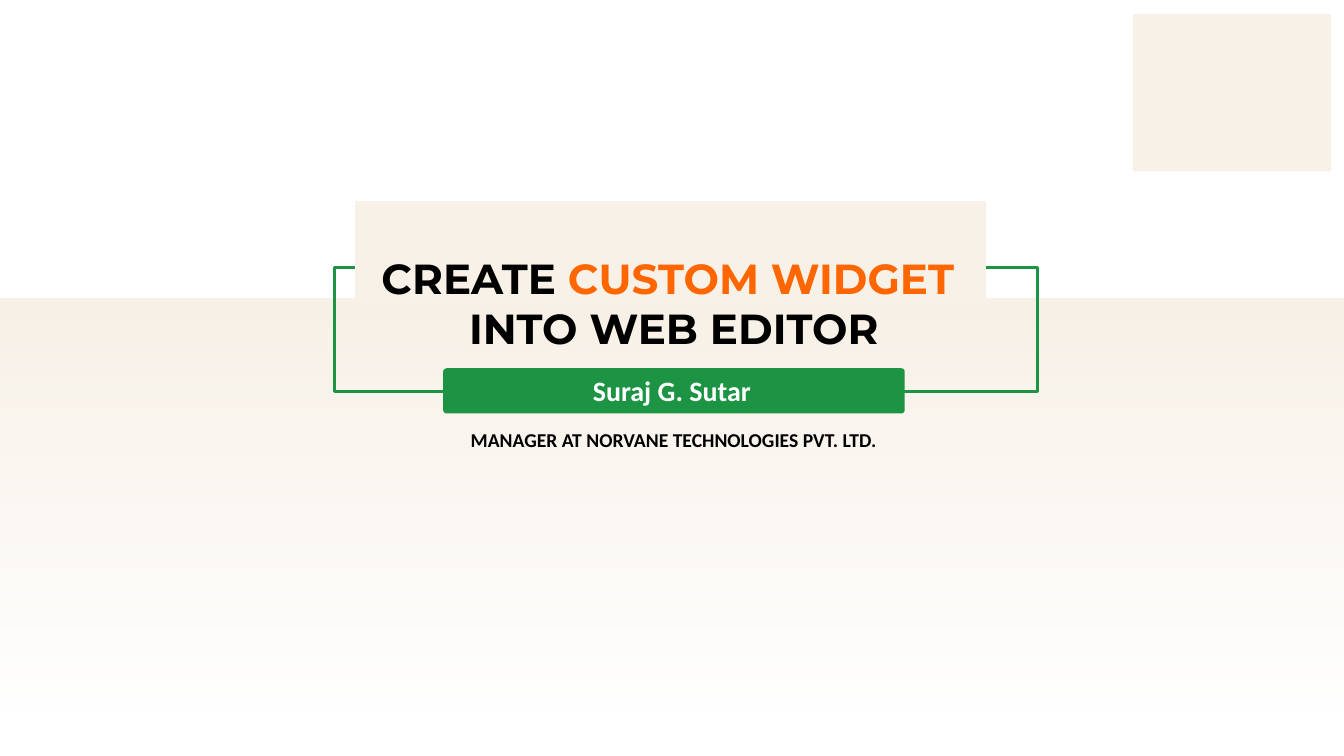
from lxml import etree
from pptx import Presentation
from pptx.dml.color import RGBColor
from pptx.enum.shapes import MSO_SHAPE
from pptx.enum.text import MSO_ANCHOR, MSO_AUTO_SIZE, PP_ALIGN
from pptx.oxml.ns import qn
from pptx.util import Cm, Pt

RECTANGLE = MSO_SHAPE.RECTANGLE
ROUNDED = MSO_SHAPE.ROUNDED_RECTANGLE
CENTER = PP_ALIGN.CENTER
TOP = MSO_ANCHOR.TOP
NO_AUTOSIZE = MSO_AUTO_SIZE.NONE

CREAM = RGBColor(0xF8, 0xF1, 0xE7)
CREAM_FADE = RGBColor(0xF9, 0xF1, 0xE6)
GREEN = RGBColor(0x1C, 0x94, 0x44)
ORANGE = RGBColor(0xFF, 0x66, 0x00)
BLACK = RGBColor(0, 0, 0)
WHITE = RGBColor(0xFF, 0xFF, 0xFF)

# Content: each paragraph is a list of (text, colour) runs
TITLE = [
    [("CREATE ", BLACK), ("CUSTOM WIDGET ", ORANGE)],
    [("INTO WEB EDITOR", BLACK)],
]
SPEAKER = [[("Suraj G. Sutar", WHITE)]]
POSITION = [[("MANAGER AT NORVANE TECHNOLOGIES PVT. LTD.", BLACK)]]

# Boxes in cm: left, top, width, height
BAND_BOX = (0, 7.52, 33.87, 10.41)
FRAME_BOX = (8.43, 6.75, 17.72, 3.11)
PANEL_BOX = (8.95, 5.07, 15.9, 2.45)
TITLE_BOX = (6.96, 6.23, 20.04, 2.82)
NAME_BAR_BOX = (11.17, 9.28, 11.63, 1.14)
SPEAKER_BOX = (13.24, 9.28, 7.39, 1.12)
POSITION_BOX = (11.38, 10.67, 11.2, 0.86)
CORNER_BOX = (28.55, 0.36, 5, 3.96)


def lengths(box):
    return [Cm(value) for value in box]


def add_block(slide, box, fill=None, line=None, kind=RECTANGLE):
    shape = slide.shapes.add_shape(kind, *lengths(box))
    shape.shadow.inherit = False
    if fill is None:
        shape.fill.background()
    else:
        shape.fill.solid()
        shape.fill.fore_color.rgb = fill
    if line is None:
        shape.line.fill.background()
    else:
        shape.line.color.rgb = line
        shape.line.width = Pt(2.25)
    return shape


def fade_down(shape, start, end):
    """Fill from an opaque colour at the top to a clear one at the bottom."""
    shape.fill.gradient()
    shape.fill.gradient_angle = 270
    for stop, colour, position in zip(shape.fill.gradient_stops, (start, end), (0, 1)):
        stop.color.rgb = colour
        stop.position = position
    last_colour = shape.element.findall(".//" + qn("a:srgbClr"))[-1]
    etree.SubElement(last_colour, qn("a:alpha"), val="0")


def write_text(shape, paragraphs, font_name, size):
    frame = shape.text_frame
    frame.word_wrap = True
    frame.auto_size = NO_AUTOSIZE
    frame.vertical_anchor = TOP
    for index, runs in enumerate(paragraphs):
        paragraph = frame.add_paragraph() if index else frame.paragraphs[0]
        paragraph.alignment = CENTER
        for text, colour in runs:
            run = paragraph.add_run()
            run.text = text
            run.font.name = font_name
            run.font.size = Pt(size)
            run.font.bold = True
            run.font.color.rgb = colour


def main():
    presentation = Presentation()
    presentation.slide_width = Cm(33.87)
    presentation.slide_height = Cm(19.05)
    slide = presentation.slides.add_slide(presentation.slide_layouts[5])

    # Backdrop
    band = add_block(slide, BAND_BOX)
    fade_down(band, CREAM, CREAM_FADE)
    add_block(slide, FRAME_BOX, line=GREEN)
    panel = add_block(slide, PANEL_BOX, CREAM)

    # Title, placed in front of the panel
    title = slide.shapes.title
    title.left, title.top, title.width, title.height = lengths(TITLE_BOX)
    write_text(title, TITLE, "Montserrat", 30)
    panel.element.addnext(title.element)

    # Speaker
    name_bar = add_block(slide, NAME_BAR_BOX, GREEN, kind=ROUNDED)
    name_bar.adjustments[0] = 0.075
    for box, paragraphs, size in ((SPEAKER_BOX, SPEAKER, 20), (POSITION_BOX, POSITION, 14)):
        write_text(slide.shapes.add_textbox(*lengths(box)), paragraphs, "Calibri", size)

    # Corner block
    add_block(slide, CORNER_BOX, CREAM)

    presentation.save("out.pptx")


if __name__ == "__main__":
    main()
